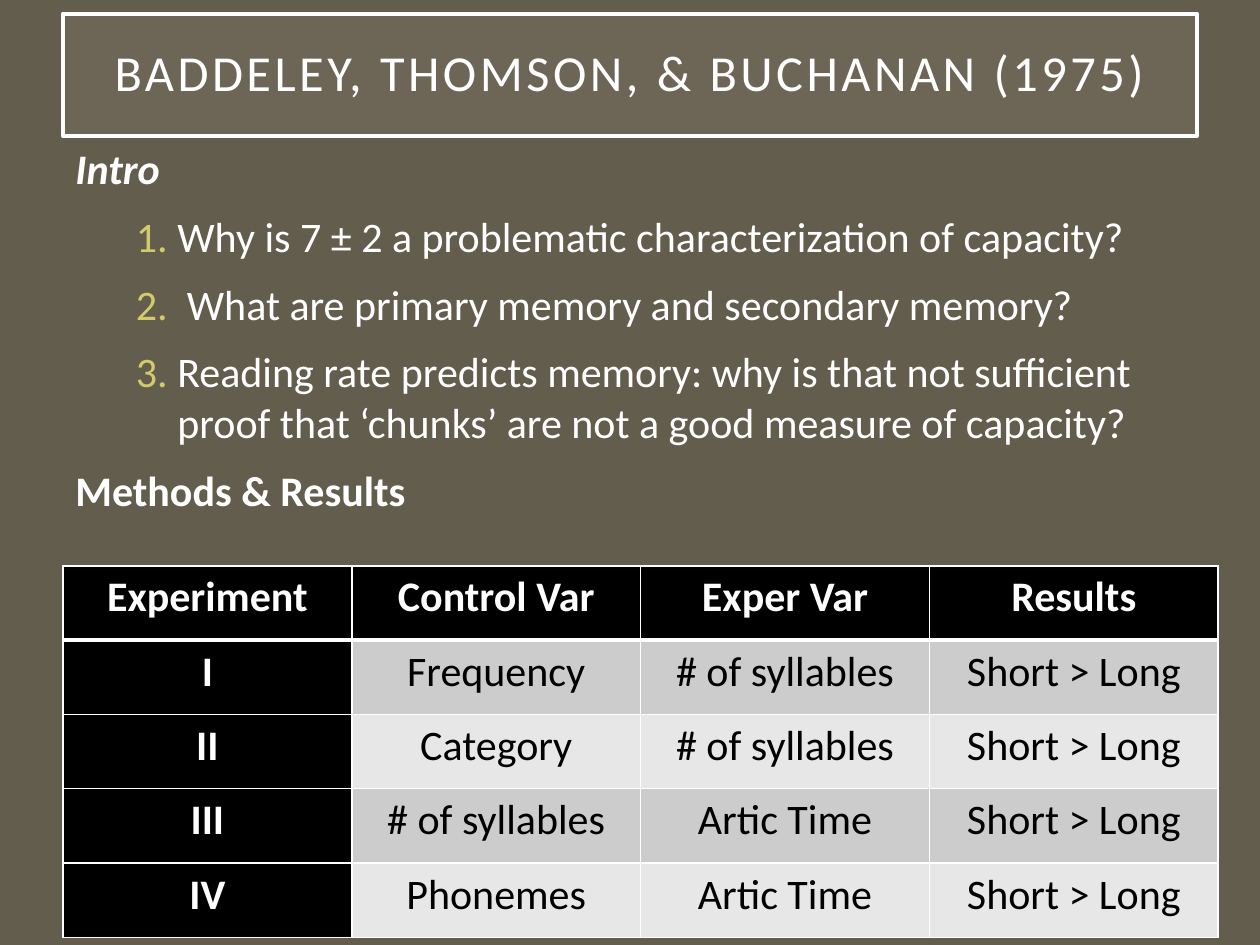
from pptx import Presentation
from pptx.dml.color import RGBColor
from pptx.enum.shapes import MSO_SHAPE as Shape
from pptx.enum.text import MSO_ANCHOR as Anchor, PP_ALIGN as Align
from pptx.oxml.ns import qn
from pptx.util import Inches, Pt
from lxml.etree import SubElement as Sub

HUES = {"back": "635D4D", "panel": "A7A08E", "white": "FFFFFF", "black": "000000",
        "number": "D2CB6C", "odd": "CCCCCC", "even": "E7E7E7"}
INTRO = [
    "Why is 7 ± 2 a problematic characterization of capacity?",
    " What are primary memory and secondary memory?",
    "Reading rate predicts memory: why is that not sufficient proof that "
    "‘chunks’ are not a good measure of capacity?",
]
ROWS = [
    ["Experiment", "Control Var", "Exper Var", "Results"],
    ["I", "Frequency", "# of syllables", "Short > Long"],
    ["II", "Category", "# of syllables", "Short > Long"],
    ["III", "# of syllables", "Artic Time", "Short > Long"],
    ["IV", "Phonemes", "Artic Time", "Short > Long"],
]


def color(name):
    return RGBColor.from_string(HUES[name])


def paint(fill, name):
    fill.solid()
    fill.fore_color.rgb = color(name)


def write(para, text, hue="white", **style):
    run = para.add_run()
    run.text = text
    for key, value in {"name": "Calibri", "size": Pt(24), **style}.items():
        setattr(run.font, key, value)
    run.font.color.rgb = color(hue)
    return run


def add_title(slide, box, text):
    shape = slide.shapes.add_shape(Shape.RECTANGLE, *box)
    shape.shadow.inherit = False
    paint(shape.fill, "panel")
    tint = shape.fill._xPr.find(".//" + qn("a:srgbClr"))
    Sub(tint, qn("a:alpha"), val="15000")
    shape.line.color.rgb = color("white")
    shape.line.width = Pt(2.5)
    frame = shape.text_frame
    for side in ("left", "top", "right", "bottom"):
        setattr(frame, "margin_" + side, Inches(0.2))
    frame.word_wrap = True
    frame.vertical_anchor = Anchor.MIDDLE
    para = frame.paragraphs[0]
    para.alignment = Align.CENTER
    para.line_spacing = 0.9
    run = write(para, text, size=Pt(28.8))
    run.font._element.set("spc", "200")


def number(para):
    """Turn a paragraph into an item of a numbered list."""
    props = para._p.get_or_add_pPr()
    props.set("marL", str(Inches(0.81)))
    props.set("indent", str(Inches(-0.33)))
    Sub(Sub(props, qn("a:buClr")), qn("a:srgbClr"), val=HUES["number"])
    Sub(props, qn("a:buFont"), typeface="+mj-lt")
    Sub(props, qn("a:buAutoNum"), type="arabicPeriod")


def add_body(slide, box):
    frame = slide.shapes.add_textbox(*box).text_frame
    frame.word_wrap = True
    lines = [("Intro", {"bold": True, "italic": True})]
    lines += [(text, {}) for text in INTRO]
    lines += [("Methods & Results", {"bold": True})]
    for i, (text, style) in enumerate(lines):
        para = frame.add_paragraph() if i else frame.paragraphs[0]
        para.space_before = Pt(10)
        if not style:
            number(para)
        write(para, text, **style)


def edge(cell, widths):
    """Draw white borders, given as points for each side."""
    props = cell._tc.get_or_add_tcPr()
    for side, width in widths.items():
        line = Sub(props, qn("a:ln" + side), w=str(Pt(width)))
        Sub(Sub(line, qn("a:solidFill")), qn("a:srgbClr"), val=HUES["white"])


def add_grid(slide, box, rows):
    table = slide.shapes.add_table(len(rows), len(rows[0]), *box).table
    for r, row in enumerate(rows):
        for c, text in enumerate(row):
            cell = table.cell(r, c)
            head = r == 0 or c == 0
            edge(cell, {"L": 1, "R": 1, "T": 3 if r == 1 else 1, "B": 3 if r == 0 else 1})
            paint(cell.fill, "black" if head else "odd" if r % 2 else "even")
            para = cell.text_frame.paragraphs[0]
            para.alignment = Align.CENTER
            write(para, text, "white" if head else "black", bold=head)


def main():
    deck = Presentation()
    deck.slide_width, deck.slide_height = Inches(10), Inches(7.5)
    slide = deck.slides.add_slide(deck.slide_layouts[6])
    paint(slide.background.fill, "back")
    left, wide = Inches(0.5), Inches(9)
    add_title(slide, (left, Inches(0.11), wide, Inches(0.97)),
              "BADDELEY, THOMSON, & BUCHANAN (1975)")
    add_body(slide, (left, Inches(1.08), wide, Inches(6.37)))
    add_grid(slide, (left, Inches(4.49), Inches(9.17), Inches(2.95)), ROWS)
    deck.save("out.pptx")


if __name__ == "__main__":
    main()
